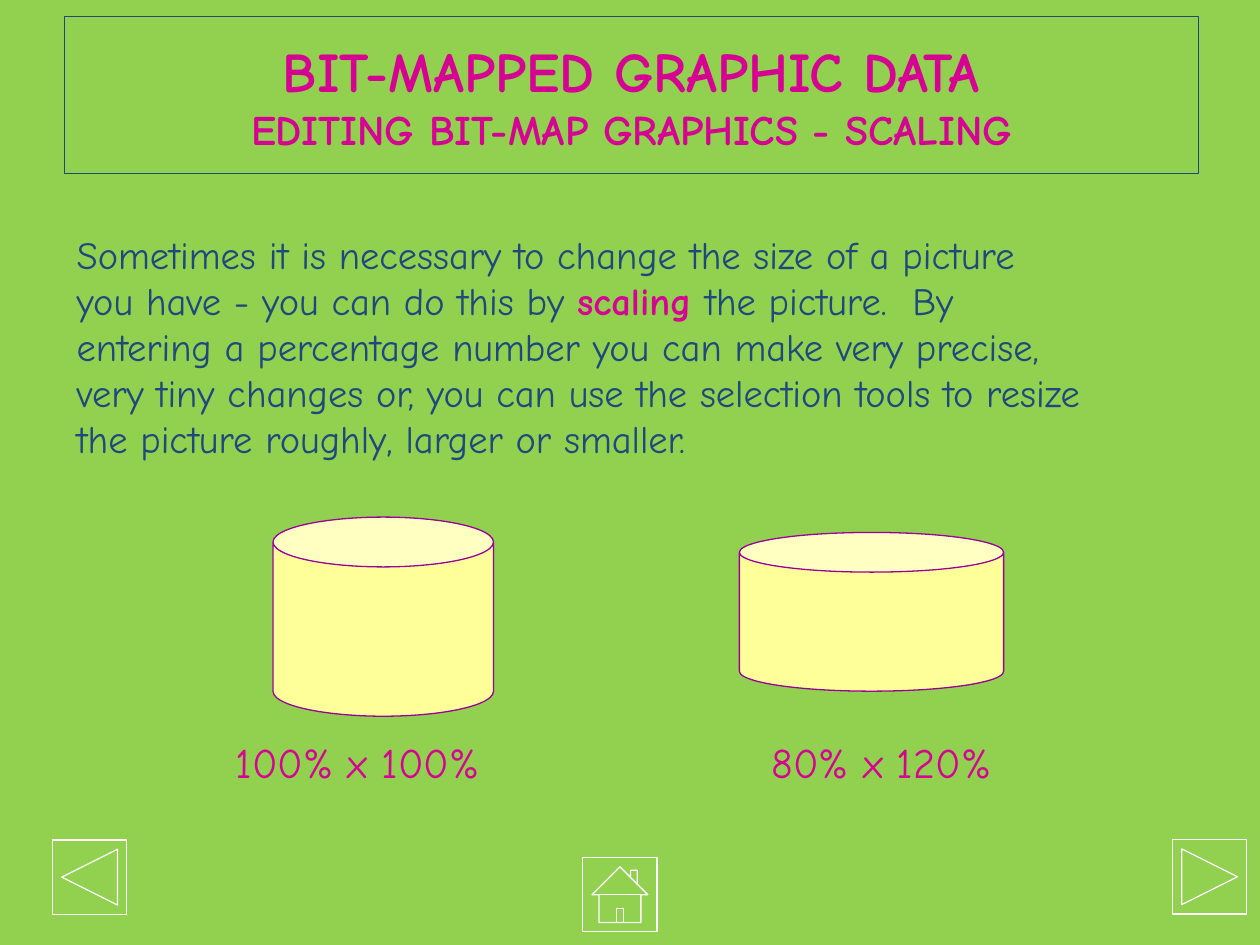
from pptx import Presentation
from pptx.dml.color import RGBColor
from pptx.enum.shapes import MSO_SHAPE as Shape
from pptx.enum.text import MSO_ANCHOR as Anchor, MSO_AUTO_SIZE as AutoSize, PP_ALIGN as Align
from pptx.util import Pt

FONT = "Comic Neue"
NAVY, PINK, PURPLE = "1F497D", "D60093", "990099"
GREEN, YELLOW, WHITE = "92D050", "FFFF99", "FFFFFF"


def rgb(color):
    return RGBColor.from_string(color)


def add_run(paragraph, text, size, color, bold=False):
    run = paragraph.add_run()
    run.text = text
    for key, value in {"name": FONT, "size": Pt(size), "bold": bold}.items():
        setattr(run.font, key, value)
    run.font.color.rgb = rgb(color)


prs = Presentation()
prs.slide_width, prs.slide_height = Pt(720), Pt(540)
slide = prs.slides.add_slide(prs.slide_layouts[5])
slide.background.fill.solid()
slide.background.fill.fore_color.rgb = rgb(GREEN)

# Title
title = slide.shapes.title
title_format = {"left": Pt(36.85), "top": Pt(9.25), "width": Pt(648), "height": Pt(90)}
for key, value in title_format.items():
    setattr(title, key, value)
title.line.color.rgb = rgb(NAVY)
title.line.width = Pt(0.75)
title.text_frame.auto_size = AutoSize.NONE
title.text_frame.vertical_anchor = Anchor.MIDDLE
heading = title.text_frame.paragraphs[0]
heading.alignment = Align.CENTER
add_run(heading, "BIT-MAPPED GRAPHIC DATA", 32, PINK, True)
heading.add_line_break()
add_run(heading, "EDITING BIT-MAP GRAPHICS - SCALING", 24, PINK, True)

# Explanation and captions: place, wrap, anchor, alignment, runs
explanation = [
    ("Sometimes it is necessary to change the size of a picture you have - "
     "you can do this by ", 22, NAVY),
    ("scaling ", 22, PINK, True),
    ("the picture.  By entering a percentage number you can make very precise, "
     "very tiny changes or, you can use the selection tools to resize the picture "
     "roughly, larger or smaller.", 22, NAVY),
]
texts = [
    ((36.75, 128.25, 588.5, 167), True, Anchor.TOP, Align.LEFT, explanation),
    ((127.5, 417.5, 192, 36), True, Anchor.TOP, Align.LEFT, [("100% x 100%", 24, PINK)]),
    ((427.75, 417.5, 152, 36), False, Anchor.MIDDLE, Align.CENTER, [("80% x 120%", 24, PINK)]),
]
for place, wrap, anchor, alignment, runs in texts:
    frame = slide.shapes.add_textbox(*map(Pt, place)).text_frame
    frame_format = {"word_wrap": wrap, "vertical_anchor": anchor,
                    "auto_size": AutoSize.SHAPE_TO_FIT_TEXT}
    for key, value in frame_format.items():
        setattr(frame, key, value)
    frame.paragraphs[0].alignment = alignment
    for run in runs:
        add_run(frame.paragraphs[0], *run)

# Scaled cylinders and navigation buttons: kind, place, fill, line
BUTTON = 42.5
drawings = [
    (Shape.CAN, (156, 295.5, 126, 113.75), YELLOW, PURPLE),
    (Shape.CAN, (422.5, 304.25, 151, 90.75), YELLOW, PURPLE),
    (Shape.ACTION_BUTTON_FORWARD_OR_NEXT, (670, 479.75, BUTTON, BUTTON), None, WHITE),
    (Shape.ACTION_BUTTON_HOME, (333, 490, BUTTON, BUTTON), None, WHITE),
    (Shape.ACTION_BUTTON_BACK_OR_PREVIOUS, (30, 480, BUTTON, BUTTON), None, WHITE),
]
for kind, place, fill, line in drawings:
    drawing = slide.shapes.add_shape(kind, *map(Pt, place))
    drawing.shadow.inherit = False
    if fill:
        drawing.fill.solid()
        drawing.fill.fore_color.rgb = rgb(fill)
    else:
        drawing.fill.background()
    drawing.line.color.rgb = rgb(line)
    drawing.line.width = Pt(0.75)

prs.save("out.pptx")
